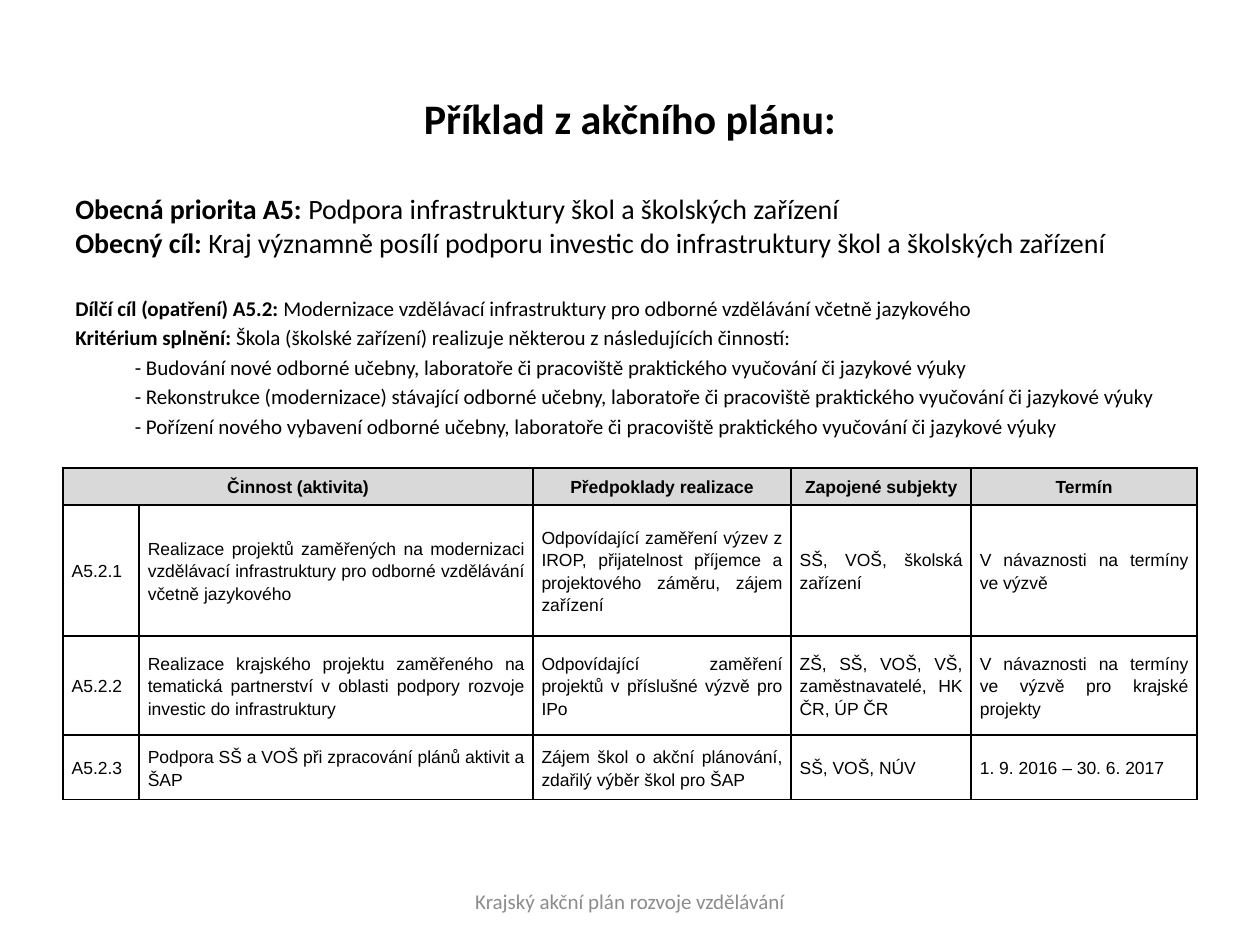
"""Build the slide with an example from the regional action plan."""
from dataclasses import dataclass
from typing import Any

from lxml.etree import SubElement
from pptx import Presentation
from pptx.dml.color import RGBColor
from pptx.enum.text import MSO_ANCHOR, PP_ALIGN
from pptx.oxml.ns import qn
from pptx.util import Pt

BLACK, GREY, HEAD_FILL = "000000", "8C8C8C", "D9D9D9"
BODY_FRAME = {"word_wrap": True, "vertical_anchor": MSO_ANCHOR.TOP}
MIDDLE_FRAME = {"word_wrap": True, "vertical_anchor": MSO_ANCHOR.MIDDLE}
CELL_FORMAT = {"vertical_anchor": MSO_ANCHOR.MIDDLE, "margin_left": Pt(5),
               "margin_right": Pt(5), "margin_top": 0, "margin_bottom": 0}


@dataclass
class Line:
    label: str
    text: str
    size: float = 12
    before: float = 2.4
    indent: float = 0


@dataclass
class Activity:
    code: str
    action: str
    conditions: str
    subjects: str
    term: str


LINES = [
    Line("Obecná priorita A5: ", "Podpora infrastruktury škol a školských zařízení", 16, 0),
    Line("Obecný cíl: ", "Kraj významně posílí podporu investic do infrastruktury škol "
         "a školských zařízení", 16, 0),
    Line("Dílčí cíl (opatření) A5.2: ", "Modernizace vzdělávací infrastruktury pro odborné "
         "vzdělávání včetně jazykového", before=21),
    Line("Kritérium splnění: ", "Škola (školské zařízení) realizuje některou "
         "z následujících činností:"),
    Line("", "- Budování nové odborné učebny, laboratoře či pracoviště praktického vyučování "
         "či jazykové výuky", indent=34),
    Line("", "- Rekonstrukce (modernizace) stávající odborné učebny, laboratoře či pracoviště "
         "praktického vyučování či jazykové výuky", indent=34),
    Line("", "- Pořízení nového vybavení odborné učebny, laboratoře či pracoviště praktického "
         "vyučování či jazykové výuky", indent=34),
]
HEADERS = ["Činnost (aktivita)", "", "Předpoklady realizace", "Zapojené subjekty", "Termín"]
ACTIVITIES = [
    Activity("A5.2.1", "Realizace projektů zaměřených na modernizaci vzdělávací "
             "infrastruktury pro odborné vzdělávání včetně jazykového",
             "Odpovídající zaměření výzev z IROP, přijatelnost příjemce a projektového "
             "záměru, zájem zařízení",
             "SŠ, VOŠ, školská zařízení", "V návaznosti na termíny ve výzvě"),
    Activity("A5.2.2", "Realizace krajského projektu zaměřeného na tematická partnerství "
             "v oblasti podpory rozvoje investic do infrastruktury",
             "Odpovídající zaměření projektů v příslušné výzvě pro IPo",
             "ZŠ, SŠ, VOŠ, VŠ, zaměstnavatelé, HK ČR, ÚP ČR",
             "V návaznosti na termíny ve výzvě pro krajské projekty"),
    Activity("A5.2.3", "Podpora SŠ a VOŠ při zpracování plánů aktivit a ŠAP",
             "Zájem škol o akční plánování, zdařilý výběr škol pro ŠAP",
             "SŠ, VOŠ, NÚV", "1. 9. 2016 – 30. 6. 2017"),
]
COL_WIDTHS = [43.5, 225, 147.5, 103, 129]
ROW_HEIGHTS = [21, 75, 56.5, 37]


def color(value: str) -> RGBColor:
    return RGBColor.from_string(value)


def apply(target: Any, values: dict[str, Any]) -> None:
    for name, value in values.items():
        setattr(target, name, value)


def add_run(p: Any, text: str, size: float, bold: bool = False,
            font: str = "Calibri", ink: str = BLACK) -> None:
    r = p.add_run()
    r.text = text
    apply(r.font, {"name": font, "size": Pt(size), "bold": bold})
    r.font.color.rgb = color(ink)


def place(sp: Any, left: float, top: float, width: float, height: float) -> None:
    apply(sp, {"left": Pt(left), "top": Pt(top), "width": Pt(width), "height": Pt(height)})


def add_body(slide: Any) -> None:
    sp = slide.shapes.add_textbox(Pt(36), Pt(106), Pt(648), Pt(155))
    tf = sp.text_frame
    apply(tf, BODY_FRAME)
    for i, line in enumerate(LINES):
        p = tf.add_paragraph() if i else tf.paragraphs[0]
        p._p.get_or_add_pPr().set("marL", str(Pt(line.indent)))
        if line.before:
            p.space_before = Pt(line.before)
        if line.label:
            add_run(p, line.label, line.size, bold=True)
        add_run(p, line.text, line.size)


def border_cell(cell: Any) -> None:
    tc_pr = cell._tc.get_or_add_tcPr()
    for side in ("lnL", "lnR", "lnT", "lnB"):
        ln = SubElement(tc_pr, qn(f"a:{side}"), w=str(Pt(1)))
        fill = SubElement(ln, qn("a:solidFill"))
        SubElement(fill, qn("a:srgbClr"), val=BLACK)


def fill_cell(cell: Any, text: str, header: bool) -> None:
    apply(cell, CELL_FORMAT)
    border_cell(cell)
    if header:
        cell.fill.solid()
        cell.fill.fore_color.rgb = color(HEAD_FILL)
    else:
        cell.fill.background()
    p = cell.text_frame.paragraphs[0]
    apply(p, {"alignment": PP_ALIGN.CENTER if header else PP_ALIGN.JUSTIFY,
              "line_spacing": 1.15})
    p.font.size = Pt(10)
    if text:
        add_run(p, text, 10, header, "Arial")


def add_activities(slide: Any) -> None:
    rows = [HEADERS] + [[a.code, a.action, a.conditions, a.subjects, a.term]
                        for a in ACTIVITIES]
    table = slide.shapes.add_table(len(rows), len(HEADERS), Pt(36), Pt(267.5),
                                   Pt(sum(COL_WIDTHS)), Pt(sum(ROW_HEIGHTS))).table
    apply(table, {"first_row": False, "horz_banding": False})
    for column, width in zip(table.columns, COL_WIDTHS):
        column.width = Pt(width)
    for row, height in zip(table.rows, ROW_HEIGHTS):
        row.height = Pt(height)
    for i, texts in enumerate(rows):
        for j, text in enumerate(texts):
            fill_cell(table.cell(i, j), text, header=i == 0)
    table.cell(0, 0).merge(table.cell(0, 1))


def add_centred(sp: Any, text: str, size: float, bold: bool, ink: str) -> None:
    apply(sp.text_frame, MIDDLE_FRAME)
    p = sp.text_frame.paragraphs[0]
    p.alignment = PP_ALIGN.CENTER
    add_run(p, text, size, bold, ink=ink)


def main() -> None:
    prs = Presentation()
    apply(prs, {"slide_width": Pt(720), "slide_height": Pt(540)})
    slide = prs.slides.add_slide(prs.slide_layouts[5])
    title = slide.shapes.title
    place(title, 36, 22, 648, 90)
    add_centred(title, "Příklad z akčního plánu:", 24, True, BLACK)
    add_body(slide)
    add_activities(slide)
    footer = slide.shapes.add_textbox(Pt(246), Pt(500.5), Pt(228), Pt(29))
    add_centred(footer, "Krajský akční plán rozvoje vzdělávání", 12, False, GREY)
    prs.save("out.pptx")


if __name__ == "__main__":
    main()
